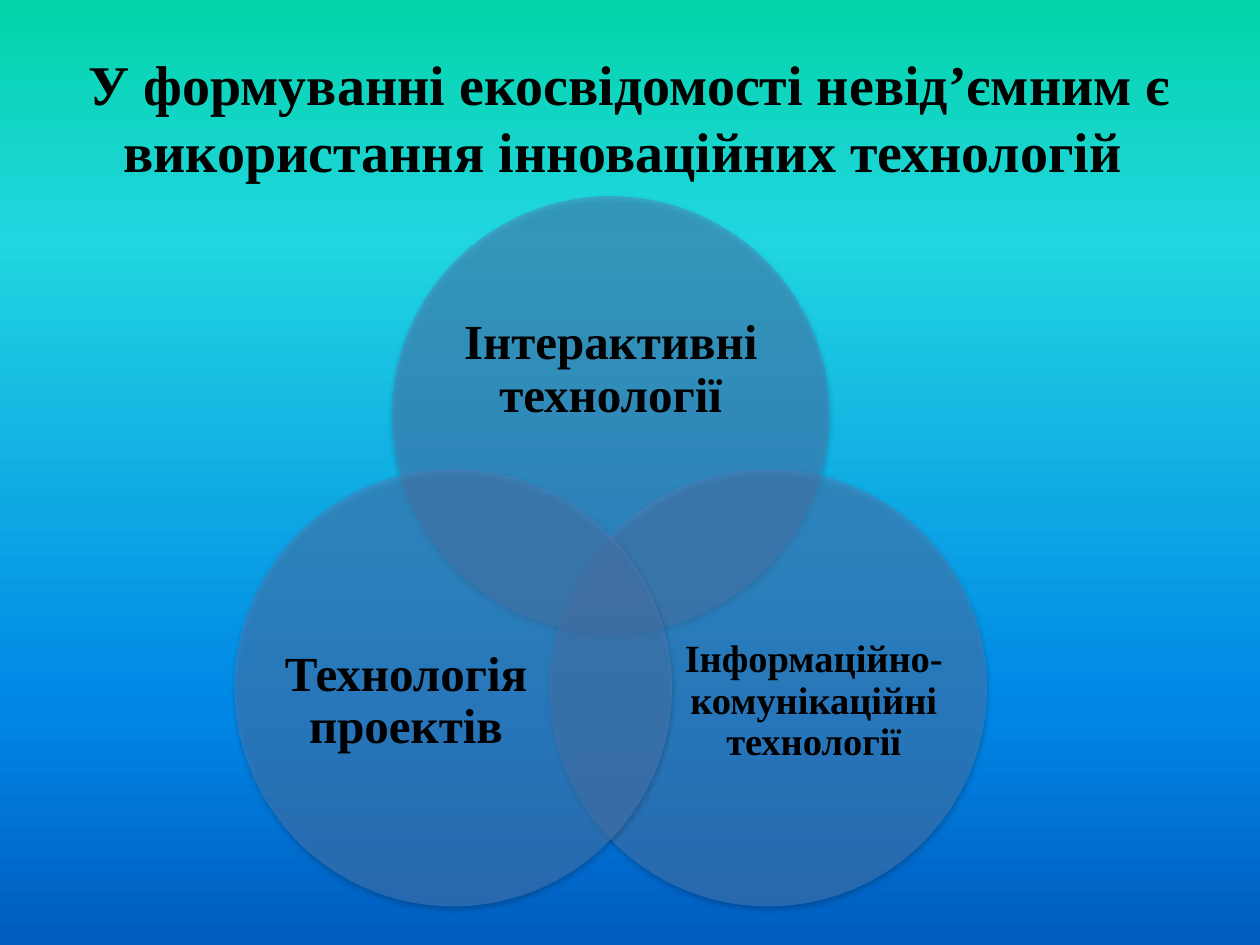
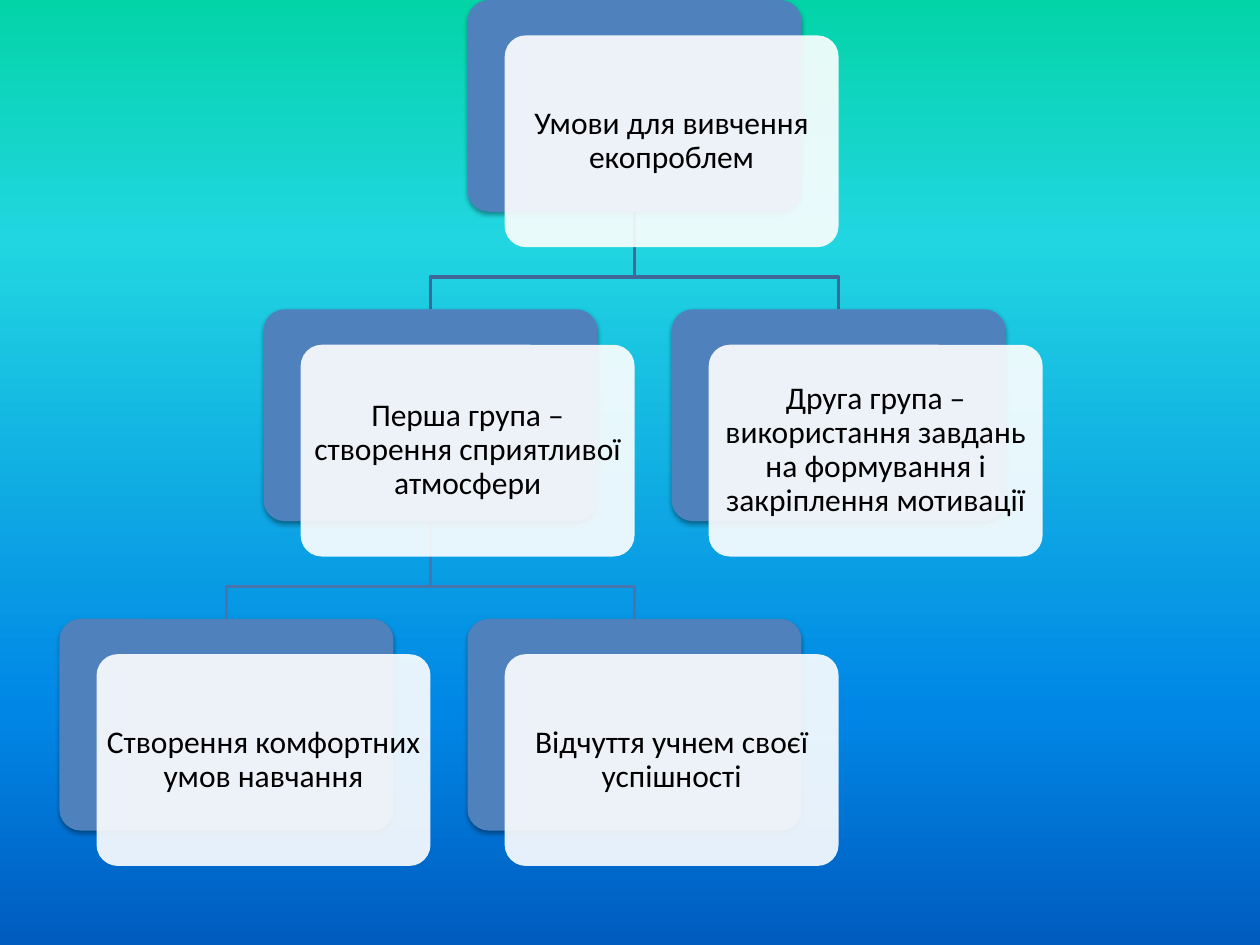
from math import cos, radians, sin, sqrt

from lxml.etree import SubElement
from pptx import Presentation
from pptx.dml.color import RGBColor
from pptx.enum.shapes import MSO_SHAPE
from pptx.enum.text import MSO_ANCHOR, PP_ALIGN
from pptx.oxml.ns import qn
from pptx.util import Pt

BLACK = RGBColor(0x00, 0x00, 0x00)
WHITE = RGBColor(0xFF, 0xFF, 0xFF)
BLUE = RGBColor(0x4F, 0x81, 0xBD)
UPPER_BRANCH = RGBColor(0x3F, 0x67, 0x97)
LOWER_BRANCH = RGBColor(0x48, 0x75, 0xAC)
SKY = [
    (0, RGBColor(0x03, 0xD4, 0xA8)),
    (25, RGBColor(0x21, 0xD6, 0xE0)),
    (75, RGBColor(0x00, 0x87, 0xE6)),
    (100, RGBColor(0x00, 0x5C, 0xBF)),
]
SERIF, SANS = "Times New Roman", "Calibri"


def paint(shape, color, opacity=100, shadow=False):
    """Solid fill without outline, optionally see-through or with a soft shadow."""
    shape.fill.solid()
    shape.fill.fore_color.rgb = color
    shape.line.fill.background()
    shape.shadow.inherit = False
    if opacity < 100:
        fill_color = shape.element.spPr.find(qn("a:solidFill")).find(qn("a:srgbClr"))
        SubElement(fill_color, qn("a:alpha"), val=str(opacity * 1000))
    if shadow:
        effects = shape.element.spPr.find(qn("a:effectLst"))
        outer = SubElement(effects, qn("a:outerShdw"), blurRad=str(Pt(3.1)),
                           dist=str(Pt(1.6)), dir="5400000", rotWithShape="0")
        shade = SubElement(outer, qn("a:srgbClr"), val=str(BLACK))
        SubElement(shade, qn("a:alpha"), val="38000")


def write(frame, text, font, size, bold, margin=None, spacing=None):
    """Centred black text in a single run."""
    frame.word_wrap = True
    frame.vertical_anchor = MSO_ANCHOR.MIDDLE
    if margin is not None:
        frame.margin_left = frame.margin_right = Pt(margin)
        frame.margin_top = frame.margin_bottom = Pt(margin)
    paragraph = frame.paragraphs[0]
    paragraph.alignment = PP_ALIGN.CENTER
    paragraph.line_spacing = spacing
    run = paragraph.add_run()
    run.text = text
    run.font.name = font
    run.font.size = Pt(size)
    run.font.bold = bold
    run.font.color.rgb = BLACK


deck = Presentation()
deck.slide_width, deck.slide_height = Pt(720), Pt(540)

# Shared background: vertical gradient on the master
sky_fill = deck.slide_master.background.fill
sky_fill.gradient()
sky_fill.gradient_angle = 270
stops = next(deck.slide_master.element.iter(qn("a:gsLst")))
for stop in list(stops):
    stops.remove(stop)
for percent, color in SKY:
    stop = SubElement(stops, qn("a:gs"), pos=str(percent * 1000))
    SubElement(stop, qn("a:srgbClr"), val=str(color))

# Slide 1: three overlapping technologies
technologies = deck.slides.add_slide(deck.slide_layouts[5])
heading = technologies.shapes.title
heading.left, heading.top, heading.width, heading.height = Pt(36), Pt(21.6), Pt(648), Pt(90)
write(heading.text_frame,
      "У формуванні екосвідомості невід’ємним є використання інноваційних технологій ",
      SERIF, 32, True)

RADIUS = 125
VENN_X, VENN_Y = 349, 341
SPREAD = 180 / sqrt(3)
# angle, label shift from the circle centre, label size, font size, label
circles = [
    (-90, 0, -25.5, 183, 112, 28, "Інтерактивні технології"),
    (30, 26, 8, 150, 138, 22, "Інформаційно-комунікаційні технології"),
    (150, -27, 8, 150, 138, 28, "Технологія проектів"),
]
for angle, shift_x, shift_y, width, height, size, label in circles:
    center_x = VENN_X + SPREAD * cos(radians(angle))
    center_y = VENN_Y + SPREAD * sin(radians(angle))
    circle = technologies.shapes.add_shape(
        MSO_SHAPE.OVAL, Pt(center_x - RADIUS), Pt(center_y - RADIUS),
        Pt(2 * RADIUS), Pt(2 * RADIUS))
    paint(circle, BLUE, opacity=50, shadow=True)
    caption = technologies.shapes.add_textbox(
        Pt(center_x + shift_x - width / 2), Pt(center_y + shift_y - height / 2),
        Pt(width), Pt(height))
    write(caption.text_frame, label, SERIF, size, True, margin=0, spacing=0.9)

# Slide 2: tree of conditions
conditions = deck.slides.add_slide(deck.slide_layouts[6])
CARD_W, CARD_H = 190.8, 121
TREE_LEFT, COLUMN_STEP, ROW_STEP = 34, 116.6, 176.8
FRONT_X, FRONT_Y = 21.2, 20.2
ELBOW = 37.4

# Branches: parent column, parent row, child column
branches = [
    (2, 0, 3, UPPER_BRANCH),
    (1, 1, 2, LOWER_BRANCH),
    (1, 1, 0, LOWER_BRANCH),
    (2, 0, 1, UPPER_BRANCH),
]
for parent, row, child, color in branches:
    parent_x, child_x = (TREE_LEFT + column * COLUMN_STEP + CARD_W / 2
                         for column in (parent, child))
    start_y = row * ROW_STEP + CARD_H
    elbow_y, end_y = start_y + ELBOW, (row + 1) * ROW_STEP
    outline = conditions.shapes.build_freeform(Pt(parent_x), Pt(start_y))
    outline.add_line_segments(
        [(Pt(parent_x), Pt(elbow_y)), (Pt(child_x), Pt(elbow_y)), (Pt(child_x), Pt(end_y))],
        close=False)
    branch = outline.convert_to_shape()
    branch.fill.background()
    branch.line.color.rgb = color
    branch.line.width = Pt(2)
    branch.shadow.inherit = False

# Cards: a blue plate with a white text card in front
cards = [
    (2, 0, "Умови для вивчення екопроблем"),
    (1, 1, "Перша група – створення сприятливої атмосфери"),
    (0, 2, "Створення комфортних умов навчання"),
    (2, 2, "Відчуття учнем своєї успішності"),
    (3, 1, "Друга група – використання завдань на формування і закріплення мотивації"),
]
for column, row, label in cards:
    left, top = TREE_LEFT + column * COLUMN_STEP, row * ROW_STEP
    plate, card = (
        conditions.shapes.add_shape(MSO_SHAPE.ROUNDED_RECTANGLE, Pt(left + dx), Pt(top + dy),
                                    Pt(CARD_W), Pt(CARD_H))
        for dx, dy in ((0, 0), (FRONT_X, FRONT_Y)))
    plate.adjustments[0] = card.adjustments[0] = 0.1
    paint(plate, BLUE, shadow=True)
    paint(card, WHITE, opacity=90)
    write(card.text_frame, label, SANS, 18, False, margin=1.5, spacing=0.9)

deck.save("out.pptx")
